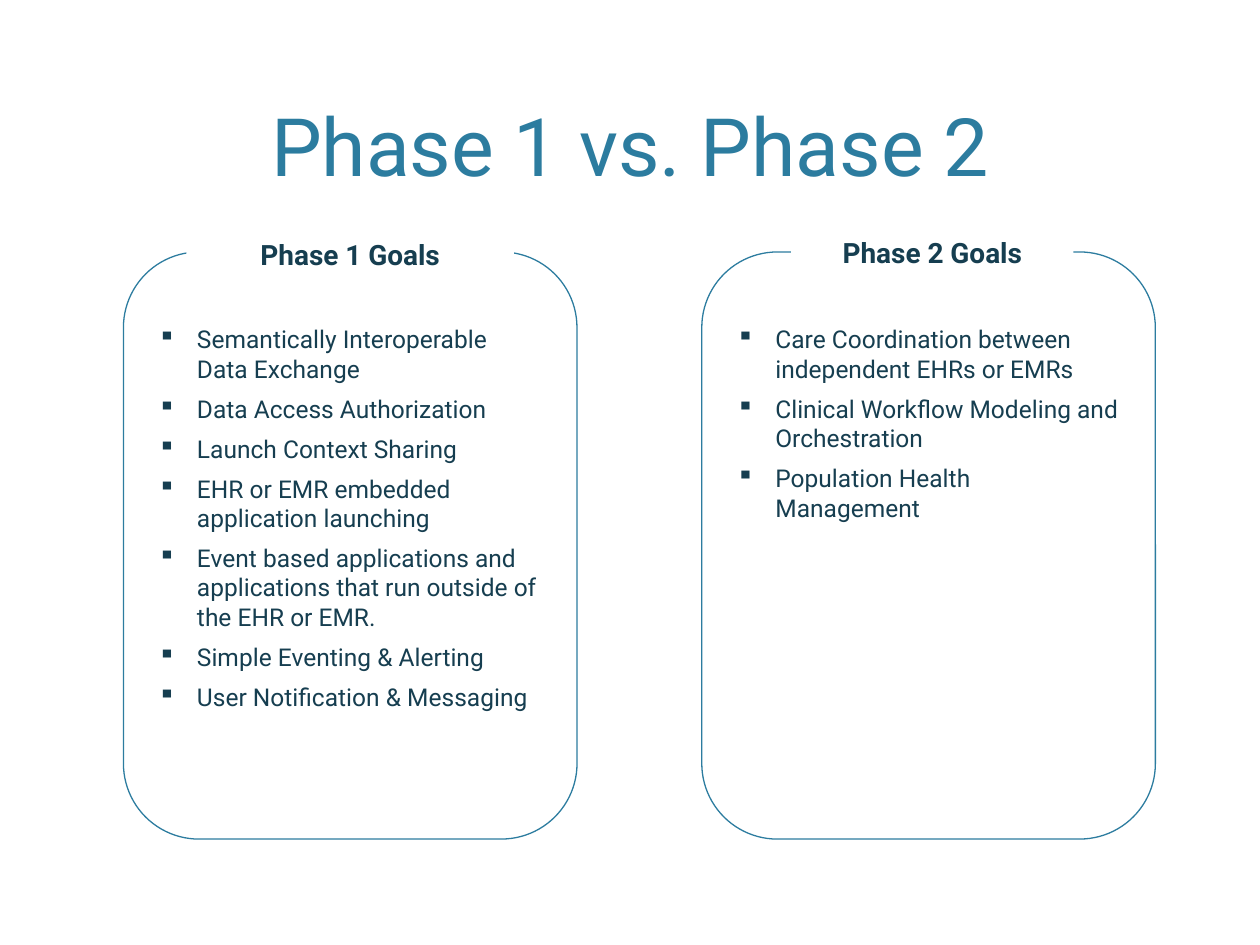
from dataclasses import dataclass

from lxml import etree
from pptx import Presentation
from pptx.dml.color import RGBColor
from pptx.enum.shapes import MSO_SHAPE
from pptx.enum.text import MSO_ANCHOR, PP_ALIGN
from pptx.oxml.ns import qn
from pptx.util import Inches, Pt

ROUND, RECT = MSO_SHAPE.ROUNDED_RECTANGLE, MSO_SHAPE.RECTANGLE
TOP, MIDDLE, BOTTOM = MSO_ANCHOR.TOP, MSO_ANCHOR.MIDDLE, MSO_ANCHOR.BOTTOM
LEFT, CENTER = PP_ALIGN.LEFT, PP_ALIGN.CENTER


@dataclass(frozen=True)
class Theme:
    face: str = "Roboto"
    blue: RGBColor = RGBColor(0x2C, 0x7C, 0x9F)
    ink: RGBColor = RGBColor(0x16, 0x3E, 0x50)
    white: RGBColor = RGBColor(0xFF, 0xFF, 0xFF)
    title: int = 46
    head: int = 16
    body: int = 14
    rule: float = 0.75


THEME = Theme()

# Panel box, label box, label, goals
PANELS = [
    ((0.98, 2, 3.6, 4.66), (1.48, 1.83, 2.6, 0.37), "Phase 1 Goals", [
        "Semantically Interoperable Data Exchange",
        "Data Access Authorization",
        "Launch Context Sharing",
        "EHR or EMR embedded application launching",
        "Event based applications and applications that run outside of "
        "the EHR or EMR.",
        "Simple Eventing & Alerting",
        "User Notification & Messaging",
    ]),
    ((5.57, 2, 3.6, 4.66), (6.28, 1.82, 2.24, 0.37), "Phase 2 Goals", [
        "Care Coordination between independent EHRs or EMRs",
        "Clinical Workflow Modeling and Orchestration",
        "Population Health Management",
    ]),
]


def style(para, size, color, align, bold=False):
    para.alignment = align
    font = para.font
    font.name, font.size, font.bold = THEME.face, Pt(size), bold
    font.color.rgb = color


def bullet(para):
    props = para._p.get_or_add_pPr()
    props.set("marL", str(Inches(0.31)))
    props.set("indent", str(-Inches(0.31)))
    mark = etree.Element(qn("a:buChar"), char="▪")
    # The schema wants the bullet ahead of the default run properties.
    props.find(qn("a:defRPr")).addprevious(mark)


def add_title(slide, box, text):
    title = slide.shapes.title
    title.left, title.top, title.width, title.height = map(Inches, box)
    frame = title.text_frame
    frame.text = text
    frame.word_wrap = True
    frame.vertical_anchor = BOTTOM
    style(frame.paragraphs[0], THEME.title, THEME.blue, CENTER)


def add_box(slide, kind, box, anchor):
    shape = slide.shapes.add_shape(kind, *map(Inches, box))
    shape.shadow.inherit = False
    shape.text_frame.word_wrap = True
    shape.text_frame.vertical_anchor = anchor
    return shape


def add_goals(slide, box, goals):
    panel = add_box(slide, ROUND, box, TOP)
    panel.fill.background()
    panel.line.color.rgb = THEME.blue
    panel.line.width = Pt(THEME.rule)
    frame = panel.text_frame
    frame.margin_top = Inches(0.4)
    frame.text = "\n".join(goals)
    for para in frame.paragraphs:
        style(para, THEME.body, THEME.ink, LEFT)
        para.space_after = Pt(6)
        bullet(para)


def add_label(slide, box, text):
    """Place a heading that masks the panel's top edge."""
    label = add_box(slide, RECT, box, MIDDLE)
    label.fill.solid()
    label.fill.fore_color.rgb = THEME.white
    label.line.fill.background()
    label.text_frame.text = text
    style(label.text_frame.paragraphs[0], THEME.head, THEME.ink, CENTER, True)


def main():
    deck = Presentation()
    deck.slide_width, deck.slide_height = Inches(10), Inches(7.5)
    slide = deck.slides.add_slide(deck.slide_layouts[5])
    add_title(slide, (0.6, 0.12, 8.8, 1.46), "Phase 1 vs. Phase 2")
    for box, tab, head, goals in PANELS:
        add_goals(slide, box, goals)
        add_label(slide, tab, head)
    deck.save("out.pptx")


if __name__ == "__main__":
    main()
